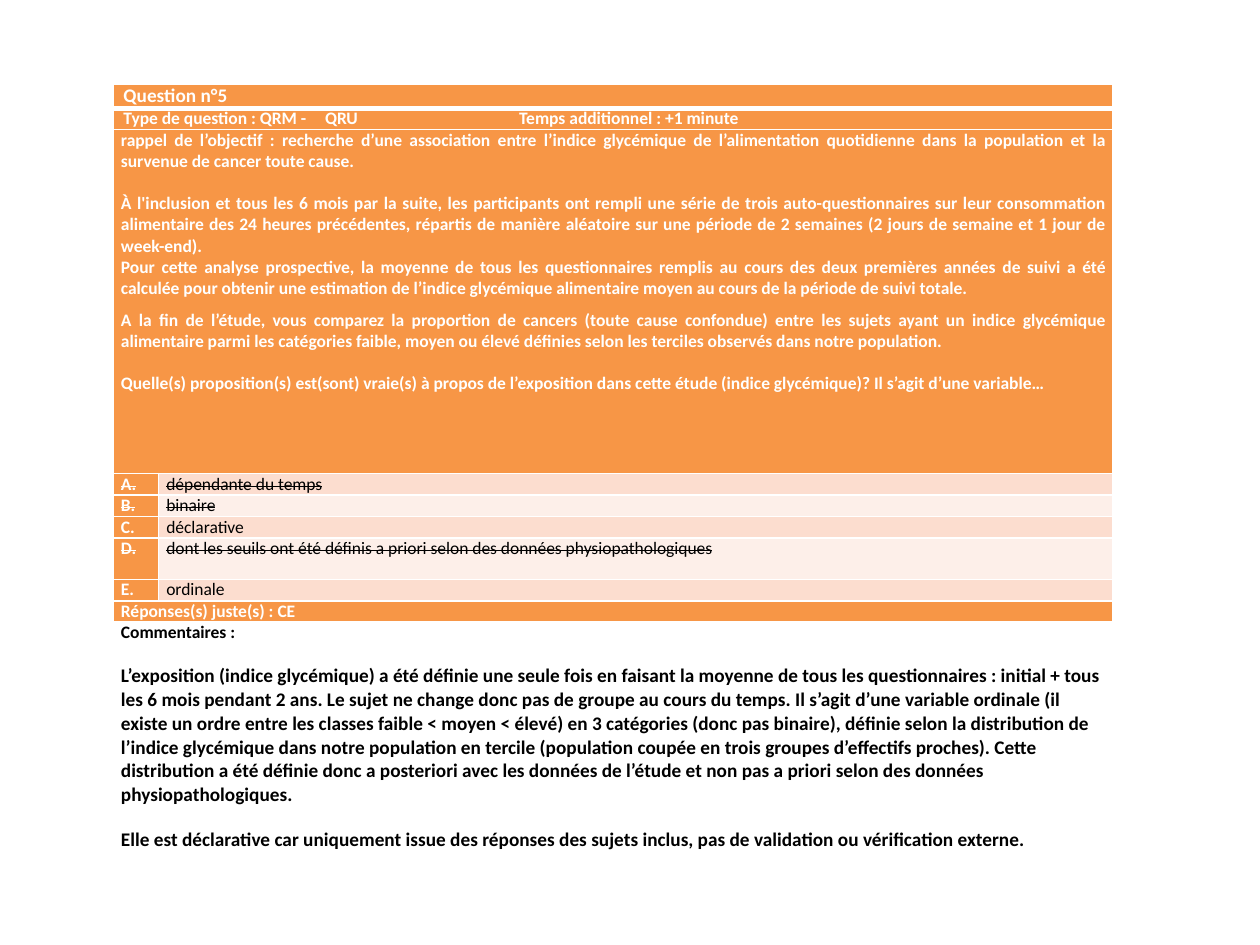
from dataclasses import dataclass

from lxml import etree
from pptx import Presentation, util as u
from pptx.dml.color import RGBColor
from pptx.enum import text
from pptx.oxml import ns


@dataclass(frozen=True)
class Theme:
    font: str = "Calibri"
    accent: str = "F79646"
    bands: tuple = ("FCDDCF", "FDEFE9")
    light: str = "FFFFFF"
    dark: str = "000000"
    normal: int = 10
    large: int = 11
    rule: int = 1
    heavy_rule: int = 3


class QuestionSlide:
    COLUMNS, ROWS = 1000, 750

    def __init__(self, presentation, theme):
        self.theme = theme
        self.column = presentation.slide_width / self.COLUMNS
        self.row = presentation.slide_height / self.ROWS
        self.slide = presentation.slides.add_slide(presentation.slide_layouts[6])

    def add_table(self, left, top, widths, heights):
        frame = self.slide.shapes.add_table(
            len(heights), len(widths),
            round(left * self.column), round(top * self.row),
            round(sum(widths) * self.column), round(sum(heights) * self.row))
        self.table = frame.table
        self.table.first_row = self.table.horz_banding = False
        for column, width in zip(self.table.columns, widths):
            column.width = round(width * self.column)
        for row, height in zip(self.table.rows, heights):
            row.height = round(height * self.row)

    def add_borders(self, cell, bottom):
        properties = cell._tc.get_or_add_tcPr()
        for side in "LRTB":
            points = bottom if side == "B" else self.theme.rule
            line = etree.SubElement(properties, ns.qn(f"a:ln{side}"), w=str(u.Pt(points)))
            fill = etree.SubElement(line, ns.qn("a:solidFill"))
            etree.SubElement(fill, ns.qn("a:srgbClr"), val=self.theme.light)

    def add_cell(self, row, column, paragraphs, fill=None, bottom=None, **style):
        cell = self.table.cell(row, column)
        formats = {"margin_left": u.Inches(0.06), "margin_right": u.Inches(0.06),
                   "margin_top": 0, "margin_bottom": 0,
                   "vertical_anchor": text.MSO_ANCHOR.TOP}
        for name, value in formats.items():
            setattr(cell, name, value)
        self.add_borders(cell, bottom or self.theme.rule)
        if fill:
            cell.fill.solid()
            cell.fill.fore_color.rgb = RGBColor.from_string(fill)
        else:
            cell.fill.background()
        for index, (words, changes) in enumerate(paragraphs):
            frame = cell.text_frame
            paragraph = frame.paragraphs[0] if index == 0 else frame.add_paragraph()
            self.add_text(paragraph, words, **{**style, **changes})

    def add_band(self, row, paragraphs, **style):
        self.table.cell(row, 0).merge(self.table.cell(row, 1))
        self.add_cell(row, 0, paragraphs, **style)

    def add_text(self, paragraph, words, size=None, color=None, bold=True, strike=False,
                 align=text.PP_ALIGN.LEFT, before=0, indent=0, tabs=()):
        properties = paragraph._p.get_or_add_pPr()
        properties.set("marL", str(u.Inches(indent)))
        if tabs:
            stops = etree.SubElement(properties, ns.qn("a:tabLst"))
            for position in tabs:
                etree.SubElement(stops, ns.qn("a:tab"), pos=str(u.Inches(position)), algn="l")
        paragraph.alignment = align
        if before:
            paragraph.space_before = u.Pt(before)
        run = paragraph.add_run()
        run.text = words
        formats = {"name": self.theme.font, "size": u.Pt(size or self.theme.normal),
                   "bold": bold}
        for name, value in formats.items():
            setattr(run.font, name, value)
        run.font.color.rgb = RGBColor.from_string(color or self.theme.light)
        if strike:
            run._r.get_or_add_rPr().set("strike", "sngStrike")

    def add_answer(self, row, index, letter, answer, correct):
        bands = self.theme.bands
        self.add_cell(row, 0, [(letter, {})], fill=self.theme.accent, strike=not correct)
        self.add_cell(row, 1, [(answer, {})], fill=bands[index % len(bands)],
                      color=self.theme.dark, bold=False, strike=not correct)


STATEMENT = [
    ("rappel de l’objectif : recherche d’une association entre l’indice glycémique de "
     "l’alimentation quotidienne dans la population et la survenue de cancer toute cause.", {}),
    ("À l'inclusion et tous les 6 mois par la suite, les participants ont rempli une série "
     "de trois auto-questionnaires sur leur consommation alimentaire des 24 heures "
     "précédentes, répartis de manière aléatoire sur une période de 2 semaines (2 jours de "
     "semaine et 1 jour de week-end).", {"before": 12}),
    ("Pour cette analyse prospective, la moyenne de tous les questionnaires remplis au cours "
     "des deux premières années de suivi a été calculée pour obtenir une estimation de "
     "l’indice glycémique alimentaire moyen au cours de la période de suivi totale.", {}),
    ("A la fin de l’étude, vous comparez la proportion de cancers (toute cause confondue) "
     "entre les sujets ayant un indice glycémique alimentaire parmi les catégories faible, "
     "moyen ou élevé définies selon les terciles observés dans notre population.",
     {"before": 6}),
    ("Quelle(s) proposition(s) est(sont) vraie(s) à propos de l’exposition dans cette étude "
     "(indice glycémique)? Il s’agit d’une variable…", {"before": 12}),
]
ANSWERS = [
    ("A.", "dépendante du temps", False),
    ("B.", "binaire", False),
    ("C.", "déclarative", True),
    ("D.", "dont les seuils ont été définis a priori selon des données "
           "physiopathologiques", False),
    ("E.", "ordinale", True),
]
COMMENTS = [
    "L’exposition (indice glycémique) a été définie une seule fois en faisant la moyenne de "
    "tous les questionnaires : initial + tous les 6 mois pendant 2 ans. Le sujet ne change "
    "donc pas de groupe au cours du temps. Il s’agit d’une variable ordinale (il existe un "
    "ordre entre les classes faible < moyen < élevé) en 3 catégories (donc pas binaire), "
    "définie selon la distribution de l’indice glycémique dans notre population en tercile "
    "(population coupée en trois groupes d’effectifs proches). Cette distribution a été "
    "définie donc a posteriori avec les données de l’étude et non pas a priori selon des "
    "données physiopathologiques.",
    "Elle est déclarative car uniquement issue des réponses des sujets inclus, pas de "
    "validation ou vérification externe.",
]


def main():
    presentation = Presentation()
    presentation.slide_width, presentation.slide_height = u.Inches(10), u.Inches(7.5)
    theme = Theme()
    slide = QuestionSlide(presentation, theme)
    slide.add_table(90, 67, [36, 757], [19, 17, 273, 17, 17, 17, 33, 17, 17, 210])

    justify = text.PP_ALIGN.JUSTIFY
    slide.add_band(0, [("Question n°5", {})], fill=theme.accent, size=theme.large,
                   align=justify, indent=0.02, bottom=theme.heavy_rule)
    slide.add_band(1, [("Type de question : QRM -\tQRU\tTemps additionnel : +1 minute", {})],
                   fill=theme.accent, indent=0.02, tabs=(1.6, 3.14))
    slide.add_band(2, STATEMENT, fill=theme.accent, align=justify)
    for index, answer in enumerate(ANSWERS):
        slide.add_answer(3 + index, index, *answer)
    slide.add_band(8, [("Réponses(s) juste(s) : CE", {})], fill=theme.accent)
    remarks = [(words, {"size": theme.large, "before": 12}) for words in COMMENTS]
    slide.add_band(9, [("Commentaires :", {})] + remarks, color=theme.dark)
    presentation.save("out.pptx")


if __name__ == "__main__":
    main()
